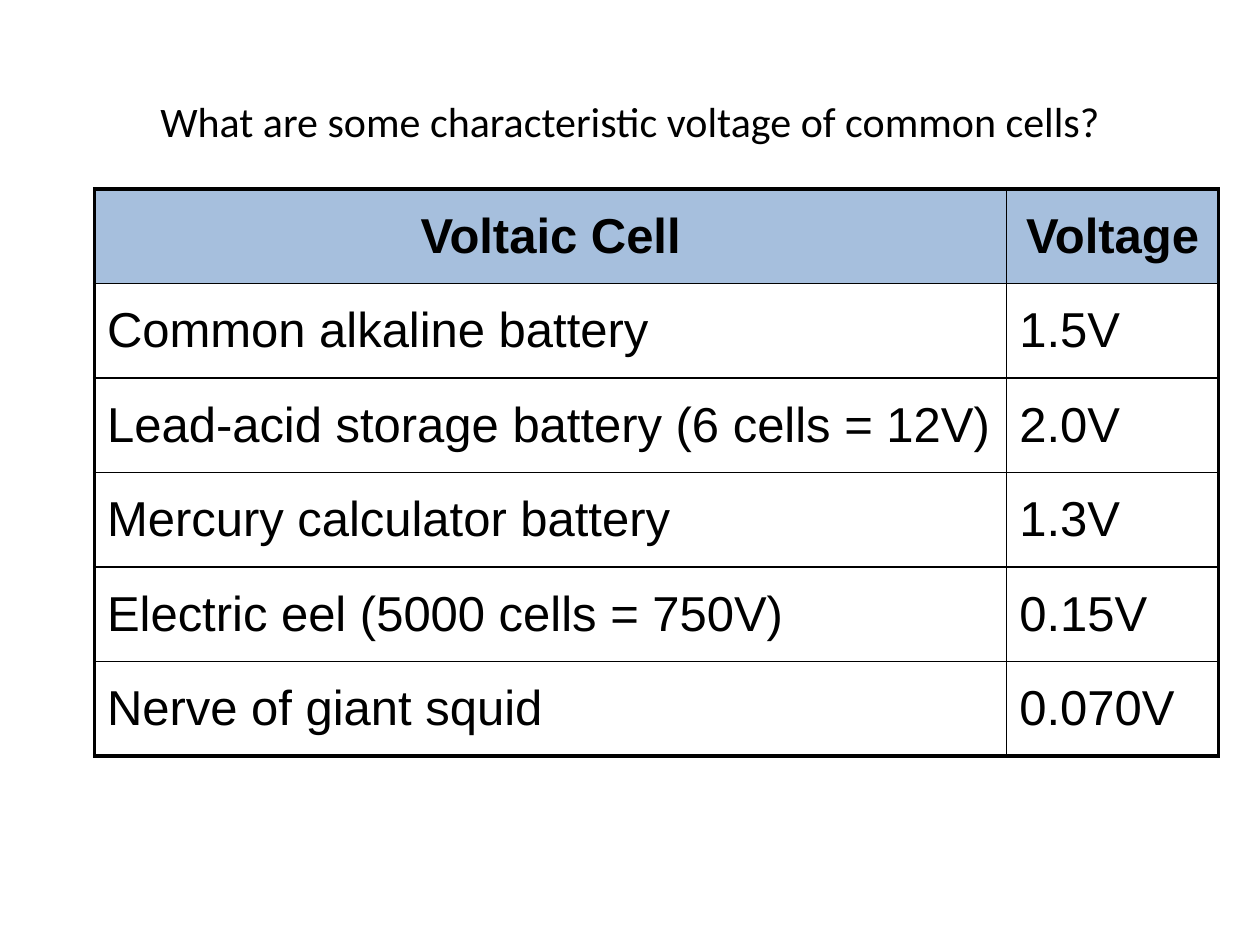
from lxml.etree import SubElement
from pptx import Presentation
from pptx.dml.color import RGBColor
from pptx.enum.text import MSO_ANCHOR as ANCHOR, PP_ALIGN as ALIGN
from pptx.oxml.ns import qn
from pptx.util import Inches, Pt

BLACK, BLUE = "000000", "4F81BD"
THIN, THICK = 1, 2.25
TITLE = "What are some characteristic voltage of common cells?"
CELLS = [
    ("Voltaic Cell", "Voltage"),
    ("Common alkaline battery", "1.5V"),
    ("Lead-acid storage battery (6 cells = 12V)", "2.0V"),
    ("Mercury calculator battery", "1.3V"),
    ("Electric eel (5000 cells = 750V)", "0.15V"),
    ("Nerve of giant squid", "0.070V"),
]
COL_WIDTHS = (7.24, 1.68)
ROW_HEIGHT = 0.75


def rgb(value):
    """Return the colour for a hex string."""
    return RGBColor.from_string(value)


def write(tf, text, align, **font):
    """Write one formatted paragraph, centred vertically."""
    tf.vertical_anchor = ANCHOR.MIDDLE
    p = tf.paragraphs[0]
    p.alignment = align
    r = p.add_run()
    r.text = text
    r.font.color.rgb = rgb(BLACK)
    for name, value in font.items():
        setattr(r.font, name, value)


def add_title(s):
    """Place and fill the title placeholder."""
    sp = s.shapes.title
    box = {"left": 0.75, "top": 0.67, "width": 8.5, "height": 0.58}
    for name, value in box.items():
        setattr(sp, name, Inches(value))
    sp.text_frame.word_wrap = True
    write(sp.text_frame, TITLE, ALIGN.CENTER, name="Calibri", size=Pt(24))


def fill_cell(cell, is_header):
    """Give header cells a half-transparent blue and the rest no fill."""
    if not is_header:
        cell.fill.background()
        return
    cell.fill.solid()
    cell.fill.fore_color.rgb = rgb(BLUE)
    color = next(cell._tc.tcPr.iter(qn("a:srgbClr")))
    SubElement(color, qn("a:alpha"), val="50000")


def border_cell(cell, widths):
    """Draw the cell's borders from a dict of side to width."""
    tc_pr = cell._tc.get_or_add_tcPr()
    for i, (side, width) in enumerate(widths.items()):
        ln = SubElement(tc_pr, qn(f"a:ln{side}"), w=str(Pt(width)))
        fill = SubElement(ln, qn("a:solidFill"))
        SubElement(fill, qn("a:srgbClr"), val=BLACK)
        tc_pr.insert(i, ln)


def add_voltage_table(s):
    """Add the table of cells and their voltages."""
    rows, cols = len(CELLS), len(COL_WIDTHS)
    frame = s.shapes.add_table(rows, cols, Inches(0.75), Inches(1.5),
                               Inches(sum(COL_WIDTHS)), Inches(rows * ROW_HEIGHT))
    table = frame.table
    table.first_row = table.horz_banding = False
    for column, width in zip(table.columns, COL_WIDTHS):
        column.width = Inches(width)
    for i, texts in enumerate(CELLS):
        is_header = i == 0
        for j, text in enumerate(texts):
            cell = table.cell(i, j)
            write(cell.text_frame, text, ALIGN.CENTER if is_header else ALIGN.LEFT,
                  name="Arial", size=Pt(28), bold=is_header)
            cell.vertical_anchor = ANCHOR.MIDDLE
            fill_cell(cell, is_header)
            outer = {"L": j == 0, "R": j == cols - 1, "T": is_header, "B": i == rows - 1}
            border_cell(cell, {side: THICK if edge else THIN for side, edge in outer.items()})


def main():
    """Build and save the slide."""
    prs = Presentation()
    prs.slide_width, prs.slide_height = Inches(10), Inches(7.5)
    s = prs.slides.add_slide(prs.slide_layouts[5])
    add_title(s)
    add_voltage_table(s)
    prs.save("out.pptx")


if __name__ == "__main__":
    main()
